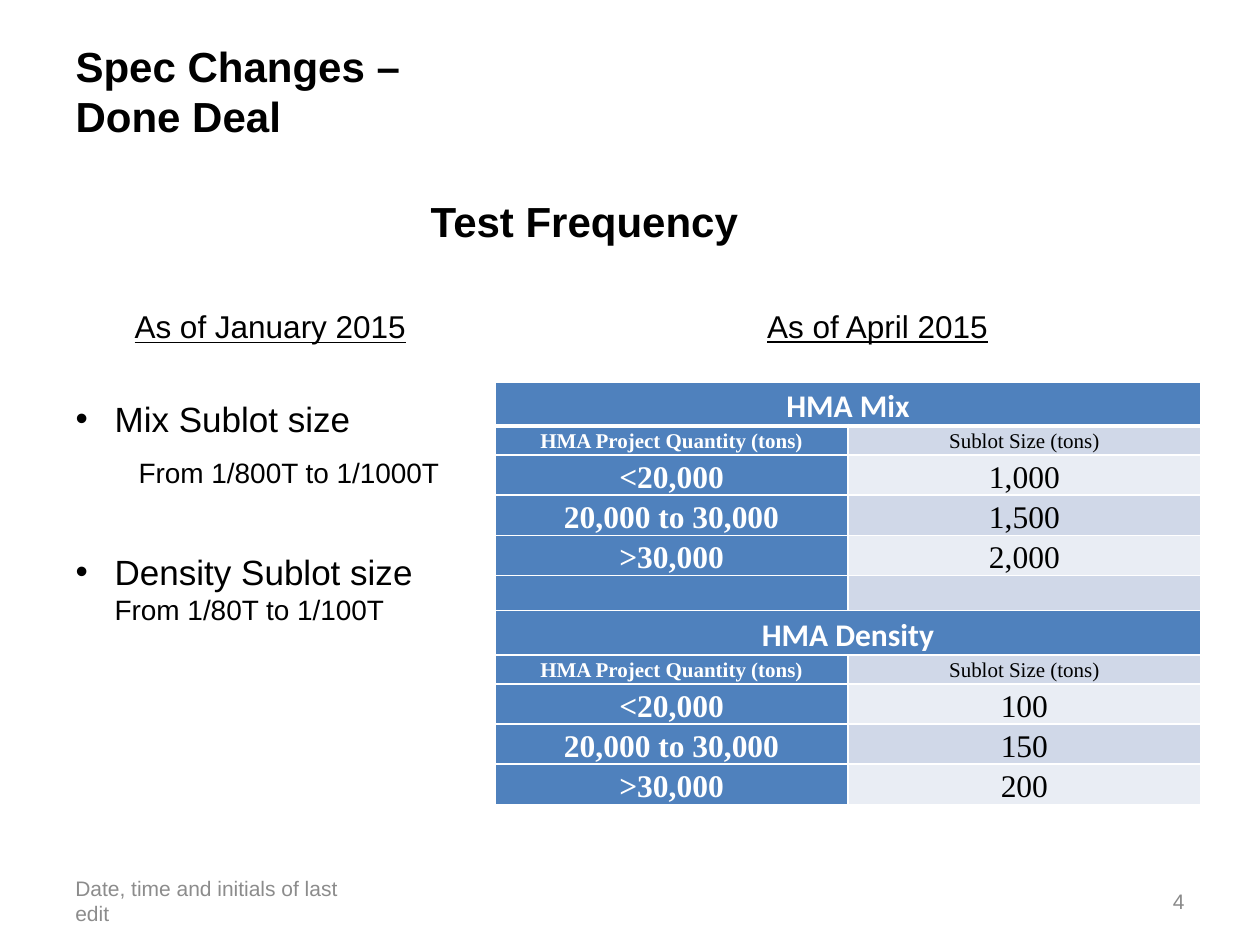
from lxml.etree import SubElement
from pptx import Presentation
from pptx.dml.color import RGBColor
from pptx.enum.text import MSO_ANCHOR, PP_ALIGN
from pptx.oxml.ns import qn
from pptx.util import Inches, Pt

BLACK = RGBColor(0x00, 0x00, 0x00)
WHITE = RGBColor(0xFF, 0xFF, 0xFF)
BLUE = RGBColor(0x4F, 0x81, 0xBD)
BANDS = [RGBColor(0xE9, 0xED, 0xF4), RGBColor(0xD0, 0xD8, 0xE8)]
DATE_GREY = RGBColor(0x8C, 0x8C, 0x8C)
NUMBER_GREY = RGBColor(0x89, 0x89, 0x89)


def style(p, size, color=BLACK, name="Arial", bold=False, underline=False):
    for r in p.runs:
        r.font.size, r.font.name = Pt(size), name
        r.font.bold, r.font.underline = bold, underline
        r.font.color.rgb = color


def set_borders(cell, bottom):
    """White 1 pt lines around a cell, with its own bottom width in points."""
    tcPr = cell._tc.get_or_add_tcPr()
    for i, (side, width) in enumerate([("L", 1), ("R", 1), ("T", 1), ("B", bottom)]):
        ln = tcPr.makeelement(qn(f"a:ln{side}"), {"w": str(Pt(width))})
        fill = SubElement(ln, qn("a:solidFill"))
        SubElement(fill, qn("a:srgbClr"), val=str(WHITE))
        tcPr.insert(i, ln)


prs = Presentation()
prs.slide_width, prs.slide_height = Inches(10), Inches(7.5)
W, H = prs.slide_width, prs.slide_height
MARGIN = int(W * 0.05)
LEFT_COL = int(W * 0.329)
LISTS_TOP = Inches(2.39)
s = prs.slides.add_slide(prs.slide_layouts[1])

# Title
title = s.shapes.title
title.left, title.top, title.width, title.height = MARGIN, int(H * 0.04), LEFT_COL, Inches(1.27)
tf = title.text_frame
tf.text = "Spec Changes – Done Deal"
tf.vertical_anchor = MSO_ANCHOR.BOTTOM
tf.margin_bottom = Inches(0.45)
tf.paragraphs[0].alignment = PP_ALIGN.LEFT
style(tf.paragraphs[0], 24, bold=True)

# Table: a heading row, a label row and three quantities per group
QUANTITIES = ["<20,000", "20,000 to 30,000", ">30,000"]
LABELS = ("HMA Project Quantity (tons)", "Sublot Size (tons)")
rows = [("HMA Mix", ""), LABELS, *zip(QUANTITIES, ["1,000", "1,500", "2,000"]), ("", ""),
        ("HMA Density", ""), LABELS, *zip(QUANTITIES, ["100", "150", "200"])]
table = s.shapes.add_table(len(rows), 2, Inches(3.93), Inches(3.03),
                           Inches(5.6), Inches(0.23 * len(rows))).table
for i, row in enumerate(rows):
    heading = row[0].startswith("HMA") and not row[1]
    blank = not row[0]
    table.rows[i].height = Inches(0.28 if blank else 0.23)
    for j, text in enumerate(row):
        cell = table.cell(i, j)
        cell.margin_left = cell.margin_right = Inches(0.06)
        cell.margin_top = cell.margin_bottom = 0
        cell.fill.solid()
        cell.fill.fore_color.rgb = BLUE if j == 0 else BANDS[i % 2 if i < 6 else (i + 0) % 2]
        set_borders(cell, 3 if i == 0 else 1)
        p = cell.text_frame.paragraphs[0]
        if not text:
            SubElement(p._p, qn("a:endParaRPr"), sz="1200")
            continue
        p.text = text
        p.alignment = PP_ALIGN.CENTER
        p.line_spacing, p.space_before = 1.15, Pt(2)
        style(p, 12 if row == LABELS else 18, WHITE if j == 0 else BLACK,
              "Calibri" if heading else "Times New Roman", bold=j == 0)
    if heading:
        table.cell(i, 0).merge(table.cell(i, 1))

# January list: text, size, left margin, hanging indent, space before
body = s.placeholders[1]
body.left, body.top, body.width, body.height = MARGIN, LISTS_TOP, LEFT_COL, Inches(3.06)
tf = body.text_frame
items = [("As of January 2015", 18, 0, 0, 0),
         ("Mix Sublot size", 20, 0.31, -0.31, 30),
         ("From 1/800T to 1/1000T", 16, 0.5, 0, 9),
         ("Density Sublot size\t", 20, 0.31, -0.31, 35)]
for i, (text, size, margin, indent, before) in enumerate(items):
    p = tf.paragraphs[0] if i == 0 else tf.add_paragraph()
    p.text = text
    p.space_before = Pt(before)
    pPr = p._p.get_or_add_pPr()
    pPr.set("marL", str(Inches(margin)))
    pPr.set("indent", str(Inches(indent)))
    if indent:
        SubElement(pPr, qn("a:buChar"), char="•")
    else:
        SubElement(pPr, qn("a:buNone"))
    style(p, size, underline=i == 0)
tf.paragraphs[0].alignment = PP_ALIGN.CENTER
r = p.add_run()
r.text = "From 1/80T to 1/100T"
r.font.size, r.font.name, r.font.color.rgb = Pt(16), "Arial", BLACK

# Captions and footer: text, left, top, width, height, size, colour
FOOT_TOP, FOOT_W, FOOT_H = Inches(6.95), Inches(2.33), Inches(0.4)
boxes = [("Date, time and initials of last edit", MARGIN, FOOT_TOP, FOOT_W, FOOT_H, 12, DATE_GREY),
         ("4", W - MARGIN - FOOT_W, FOOT_TOP, FOOT_W, FOOT_H, 12, NUMBER_GREY),
         ("As of April 2015", Inches(5.49), LISTS_TOP, Inches(2.5), Inches(0.4), 18, BLACK),
         ("Test Frequency", Inches(3.32), int(H * 0.2), Inches(2.99), Inches(0.5), 24, BLACK)]
for text, left, top, width, height, size, color in boxes:
    tf = s.shapes.add_textbox(left, top, width, height).text_frame
    tf.word_wrap = True
    p = tf.paragraphs[0]
    p.text = text
    style(p, size, color, bold=size == 24, underline=size == 18)
    if top == FOOT_TOP:
        tf.vertical_anchor = MSO_ANCHOR.MIDDLE
    if text == "4":
        p.alignment = PP_ALIGN.RIGHT
    if size == 18:
        p._p.get_or_add_pPr().set("marL", str(Inches(0.5)))

prs.save("out.pptx")
